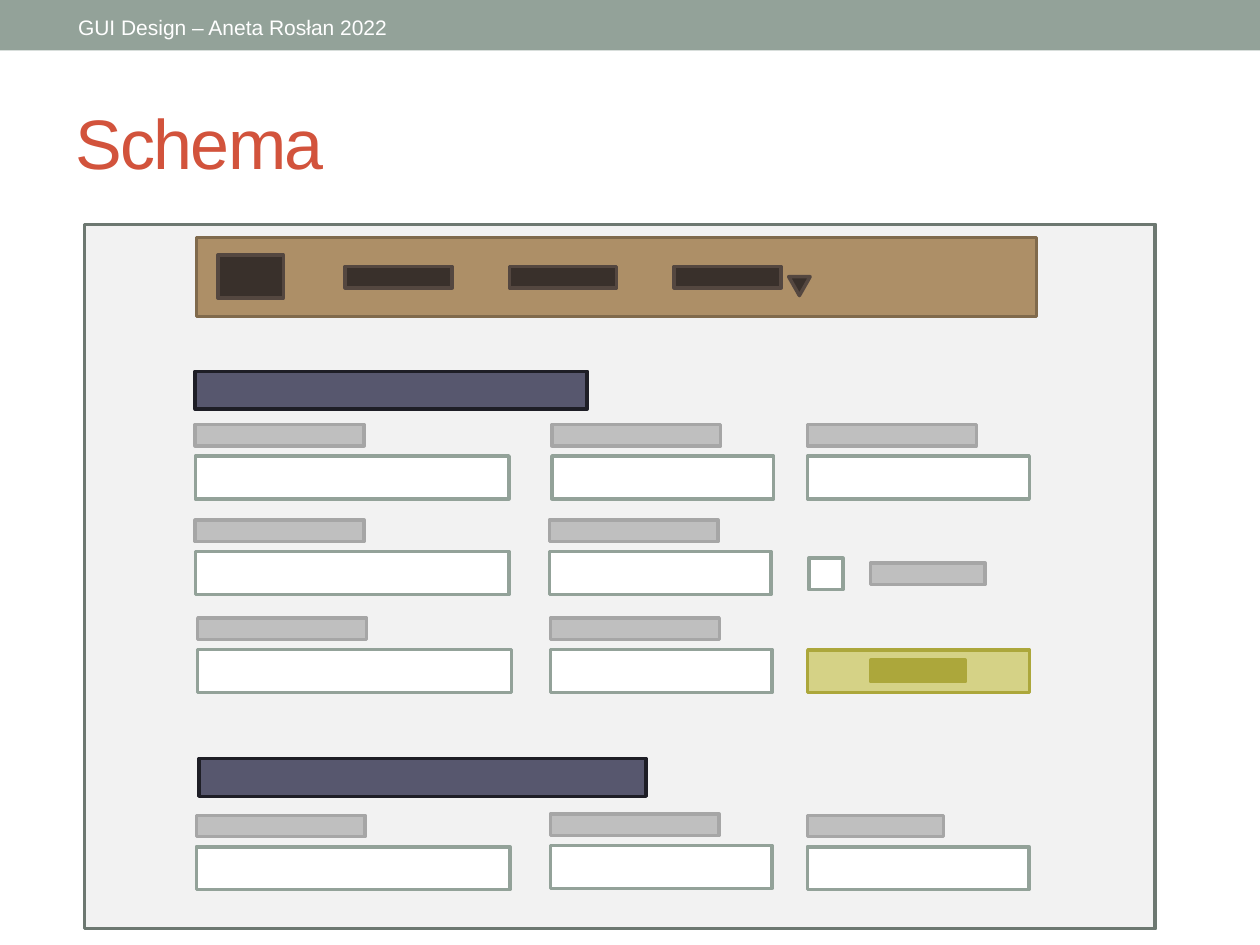
from pptx import Presentation
from pptx.dml.color import RGBColor
from pptx.enum import shapes, text
from pptx.oxml import xmlchemy
from pptx.util import Pt

FONT = "Arial"
COLORS = {
    "band": "93A299", "white": "FFFFFF", "title": "D2533C",
    "page": "F2F2F2", "page_line": "6D7871",
    "menu": "AD8F67", "menu_line": "806A4C",
    "item": "39302B", "item_line": "544740",
    "label": "BFBFBF", "label_line": "A6A6A6",
    "heading": "57576E", "heading_line": "1E1E26",
    "button": "D5D286", "button_line": "ACA73B",
}
LABEL_H, INPUT_H, INPUT_DROP = 12.25, 24.5, 18
LABEL_W = 96.5
INPUT_WIDTHS = (179.3, 126.7, 126.7)


def rgb(name):
    return RGBColor.from_string(COLORS[name])


def block(slide, box, fill, line=None, kind=shapes.MSO_SHAPE.RECTANGLE):
    """Filled shape with an optional 2 pt outline."""
    shape = slide.shapes.add_shape(kind, *(Pt(v) for v in box))
    shape.shadow.inherit = False
    shape.fill.solid()
    shape.fill.fore_color.rgb = rgb(fill)
    if line:
        shape.line.color.rgb = rgb(line)
        shape.line.width = Pt(2)
        outline = shape.line._get_or_add_ln()
        outline.append(xmlchemy.OxmlElement("a:round"))
    else:
        shape.line.fill.background()
    return shape


def style(paragraph, size, color):
    paragraph.alignment = text.PP_ALIGN.LEFT
    for run in paragraph.runs:
        run.font.name = FONT
        run.font.size = Pt(size)
        run.font.color.rgb = rgb(color)


def header(slide, box):
    x, y, _, _ = box
    block(slide, box, "band")
    course = block(slide, (x + 37.5, y + 4.5, 226.8, 21.6), "band")
    frame = course.text_frame
    frame.text = "GUI Design – Aneta Rosłan 2022"
    frame.vertical_anchor = text.MSO_ANCHOR.MIDDLE
    style(frame.paragraphs[0], 12, "white")


def heading_title(slide, box):
    title = slide.shapes.title
    title.left, title.top, title.width, title.height = (Pt(v) for v in box)
    frame = title.text_frame
    frame.text = "Schema"
    frame.vertical_anchor = text.MSO_ANCHOR.MIDDLE
    style(frame.paragraphs[0], 40, "title")
    frame.paragraphs[0].runs[0].font._element.set("spc", "-100")


def menu_bar(slide, box):
    x, y, _, _ = box
    block(slide, box, "menu", "menu_line")
    block(slide, (x + 12.25, y + 10, 37.5, 24.5), "item", "item_line")
    for column in range(3):
        item = (x + 85 + 94 * column, y + 16.5, 61.2, LABEL_H)
        block(slide, item, "item", "item_line")
    block(slide, (x + 338.5, y + 22.3, 12.25, 10.8), "item", "item_line",
          shapes.MSO_SHAPE.FLOWCHART_MERGE)


def field(slide, x, y, input_w, label_w=LABEL_W):
    """Label with its input box below."""
    block(slide, (x, y + INPUT_DROP, input_w, INPUT_H), "white", "band")
    block(slide, (x, y, label_w, LABEL_H), "label", "label_line")


def section(slide, box, heading, rows):
    """Heading bar and rows of fields, each field at (dx, dy[, label width])."""
    x, y, _, _ = box
    heading_dx, heading_w = heading
    block(slide, (x + heading_dx, y, heading_w, 21.6), "heading", "heading_line")
    for row in rows:
        for (dx, dy, *label_w), input_w in zip(row, INPUT_WIDTHS):
            field(slide, x + dx, y + dy, input_w, *label_w)


def checkbox(slide, box):
    x, y, _, _ = box
    block(slide, (x, y, 19.5, 18), "white", "band")
    block(slide, (x + 35.3, y + 2.9, 65.5, LABEL_H), "label", "label_line")


def button(slide, box):
    x, y, _, _ = box
    block(slide, box, "button", "button_line")
    block(slide, (x + 36, y + 5.9, 54, LABEL_H), "button_line", "button_line")


def page(slide, box):
    x, y, _, _ = box
    block(slide, box, "page", "page_line")
    menu_bar(slide, (x + 64, y + 7.6, 480.2, 45))
    section(slide, (x + 63.4, y + 84, 477, 184), (0, 224), [
        [(0, 30.4), (203.8, 30.4), (349.9, 30.4)],
        [(0, 85), (202.3, 85)],
        [(1.4, 141), (203, 141)],
    ])
    checkbox(slide, (x + 414, y + 190.7, 101, 18))
    button(slide, (x + 413.4, y + 243.2, 126.7, INPUT_H))
    section(slide, (x + 64, y + 305.3, 477, 75), (1.5, 255.6), [
        [(0, 32.4), (202.3, 31.7), (349.2, 32.4, 77.8)],
    ])


def main():
    deck = Presentation()
    deck.slide_width, deck.slide_height = Pt(720), Pt(540)
    slide = deck.slides.add_slide(deck.slide_layouts[5])
    header(slide, (0, 0, 720, 28.8))
    heading_title(slide, (36, 41.8, 648, 77.8))
    page(slide, (48.2, 128.2, 612, 402.5))
    deck.save("out.pptx")


if __name__ == "__main__":
    main()
